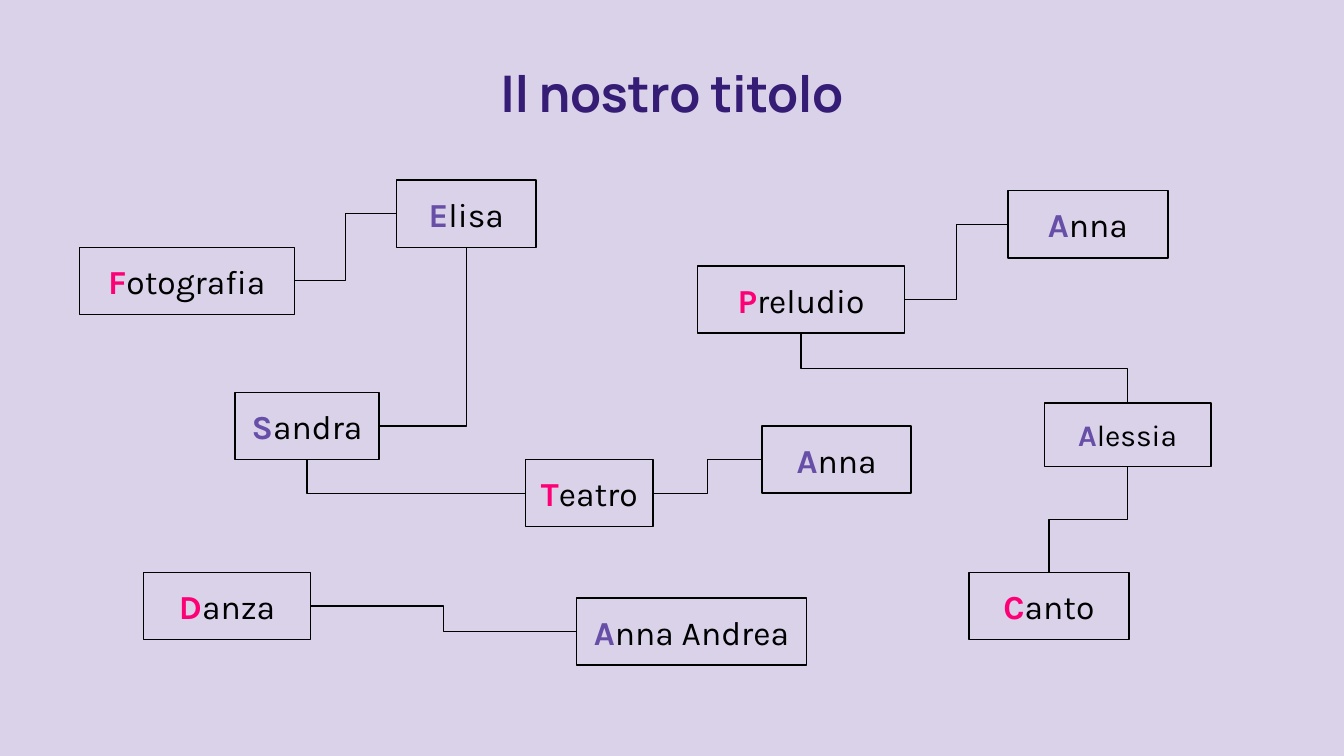
from lxml.etree import SubElement
from pptx import Presentation
from pptx.dml.color import RGBColor
from pptx.enum.shapes import MSO_CONNECTOR, MSO_SHAPE
from pptx.enum.text import MSO_ANCHOR, MSO_AUTO_SIZE, PP_ALIGN
from pptx.oxml.ns import qn
from pptx.util import Inches, Pt

LILAC = RGBColor(0xD9, 0xD2, 0xE9)
INDIGO = RGBColor(0x35, 0x1C, 0x75)
VIOLET = RGBColor(0x67, 0x4E, 0xA7)
PINK = RGBColor(0xFE, 0x00, 0x75)
BLACK = RGBColor(0, 0, 0)
TOP, LEFT, BOTTOM, RIGHT = range(4)

# key: text, initial colour, left, top, width
BOXES = {
    "fotografia": ("Fotografia", PINK, 0.59, 1.84, 1.6),
    "danza": ("Danza", PINK, 1.07, 4.26, 1.24),
    "teatro": ("Teatro", PINK, 3.91, 3.42, 0.95),
    "canto": ("Canto", PINK, 7.21, 4.26, 1.19),
    "preludio": ("Preludio", PINK, 5.19, 1.98, 1.54),
    "elisa": ("Elisa", VIOLET, 2.95, 1.34, 1.04),
    "anna preludio": ("Anna", VIOLET, 7.5, 1.42, 1.19),
    "sandra": ("Sandra", VIOLET, 1.75, 2.92, 1.07),
    "anna andrea": ("Anna Andrea", VIOLET, 4.29, 4.45, 1.71),
    "anna teatro": ("Anna", VIOLET, 5.67, 3.17, 1.11),
}
LINKS = [
    ("fotografia", RIGHT, "elisa", LEFT),
    ("sandra", RIGHT, "elisa", BOTTOM),
    ("teatro", LEFT, "sandra", BOTTOM),
    ("teatro", RIGHT, "anna teatro", LEFT),
    ("danza", RIGHT, "anna andrea", LEFT),
    ("alessia", BOTTOM, "canto", TOP),
    ("preludio", BOTTOM, "alessia", TOP),
    ("preludio", RIGHT, "anna preludio", LEFT),
]


def side_middle(box, side):
    x_share, y_share = {TOP: (0.5, 0), LEFT: (0, 0.5), BOTTOM: (0.5, 1), RIGHT: (1, 0.5)}[side]
    return int(box.left + box.width * x_share), int(box.top + box.height * y_share)


class Diagram:
    body_font, title_font = "Karla", "Manrope"
    line_width = Pt(0.75)

    def __init__(self, page):
        self.page = page
        page.background.fill.solid()
        page.background.fill.fore_color.rgb = LILAC

    def outline(self, shape):
        shape.line.color.rgb = BLACK
        shape.line.width = self.line_width

    def fill_frame(self, frame, anchor, auto_size):
        frame.margin_left = frame.margin_right = Inches(0.1)
        frame.margin_top = frame.margin_bottom = Inches(0.1)
        frame.word_wrap = True
        frame.vertical_anchor = anchor
        frame.auto_size = auto_size
        para = frame.paragraphs[0]
        para.alignment = PP_ALIGN.CENTER
        return para

    def title(self, text):
        box = self.page.shapes.title
        box.left, box.top = Inches(0.34), Inches(0.35)
        box.width, box.height = Inches(9.32), Inches(0.68)
        para = self.fill_frame(box.text_frame, MSO_ANCHOR.MIDDLE, MSO_AUTO_SIZE.NONE)
        para.text = text
        font = para.font
        font.name, font.size, font.bold = self.title_font, Pt(27), True
        font.color.rgb = INDIGO

    def name_box(self, text, colour, left, top, width, height=0.5, size=18):
        """Draw an outlined box whose text has a bold, coloured initial."""
        box = self.page.shapes.add_shape(
            MSO_SHAPE.RECTANGLE, Inches(left), Inches(top), Inches(width), Inches(height))
        box.shadow.inherit = False
        box.fill.background()
        self.outline(box)
        para = self.fill_frame(box.text_frame, MSO_ANCHOR.TOP, MSO_AUTO_SIZE.SHAPE_TO_FIT_TEXT)
        para.font.name, para.font.size = self.body_font, Pt(size)
        for part, part_colour, bold in ((text[0], colour, True), (text[1:], BLACK, False)):
            span = para.add_run()
            span.text = part
            span.font.bold = bold
            span.font.color.rgb = part_colour
        return box

    def link(self, start, start_side, end, end_side):
        """Join two boxes with an elbow; one that turns once must start sideways."""
        x1, y1 = side_middle(start, start_side)
        x2, y2 = side_middle(end, end_side)
        elbow = self.page.shapes.add_connector(MSO_CONNECTOR.ELBOW, x1, y1, x2, y2)
        elbow.begin_connect(start, start_side)
        elbow.end_connect(end, end_side)
        self.outline(elbow)
        properties = elbow._element.spPr
        SubElement(properties, qn("a:effectLst"))
        if start_side == BOTTOM:
            # A downward elbow is a sideways one turned by 90 degrees about its centre.
            across, down = abs(x2 - x1), y2 - y1
            elbow.left, elbow.top = (x1 + x2 - down) // 2, (y1 + y2 - across) // 2
            elbow.width, elbow.height = down, across
            frame = properties.find(qn("a:xfrm"))
            frame.set("rot", "5400000")
            frame.set("flipH", "0")
            frame.set("flipV", "1" if x2 > x1 else "0")
        elif end_side == BOTTOM:
            properties.find(qn("a:prstGeom")).set("prst", "bentConnector2")


def main():
    deck = Presentation()
    deck.slide_width = Inches(10)
    deck.slide_height = deck.slide_width * 9 // 16
    diagram = Diagram(deck.slides.add_slide(deck.slide_layouts[5]))
    diagram.title("Il nostro titolo")
    boxes = {key: diagram.name_box(*values) for key, values in BOXES.items()}
    boxes["alessia"] = diagram.name_box("Alessia", VIOLET, 7.77, 3, 1.24, height=0.47, size=16)
    for start, start_side, end, end_side in LINKS:
        diagram.link(boxes[start], start_side, boxes[end], end_side)
    deck.save("out.pptx")


if __name__ == "__main__":
    main()
